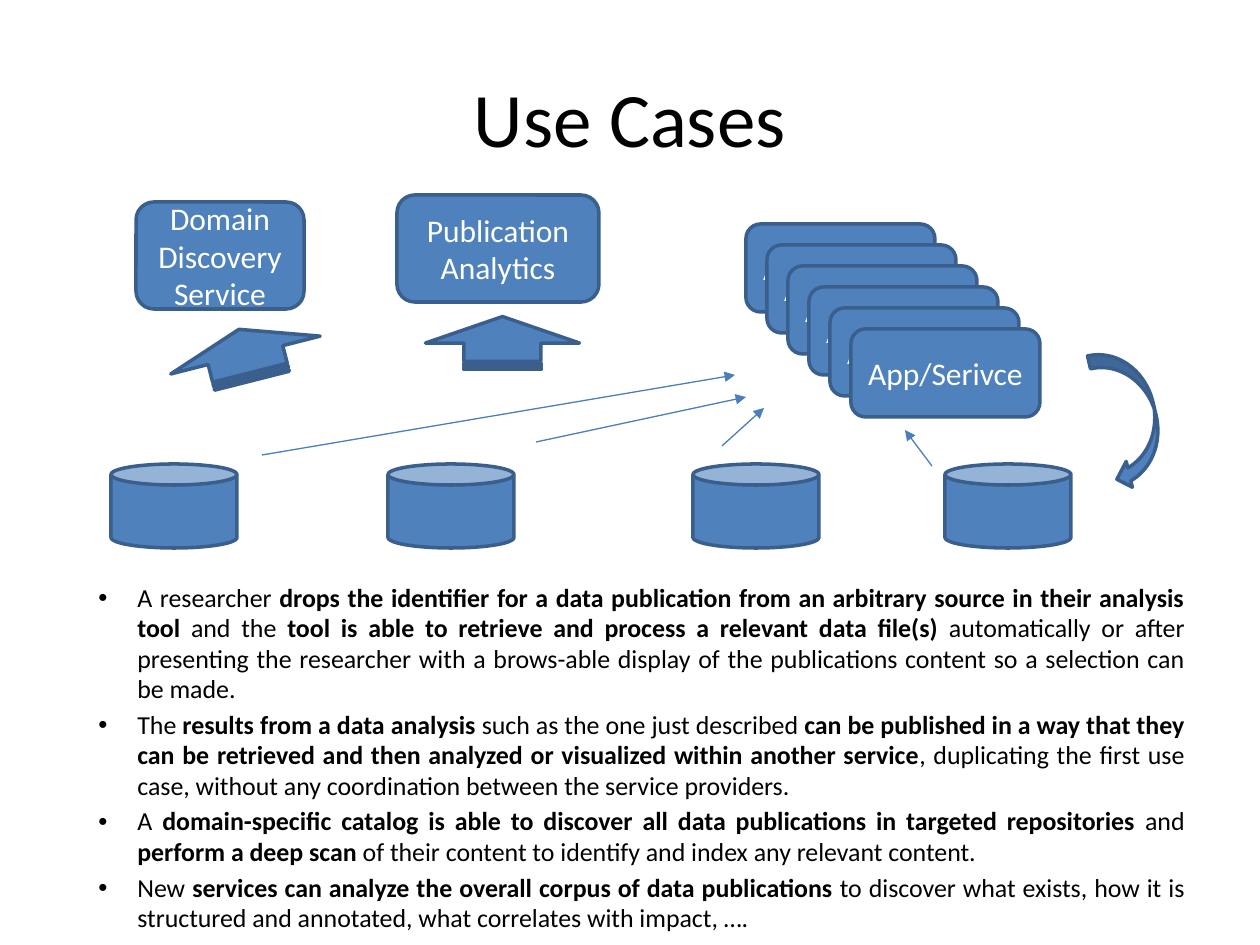
import pptx
import pptx.dml.color
import pptx.enum.shapes
import pptx.enum.text
import pptx.oxml.ns
import pptx.util
from dataclasses import dataclass
from lxml import etree

PX_PER_INCH = 126
SHAPE = pptx.enum.shapes.MSO_SHAPE
ALIGN = pptx.enum.text.PP_ALIGN
ANCHOR = pptx.enum.text.MSO_ANCHOR


@dataclass(frozen=True)
class Theme:
    font: str = "Calibri"
    text: str = "000000"
    label: str = "FFFFFF"
    fill: str = "4F81BD"
    outline: str = "3A5F8C"
    arrow: str = "4B7EBC"
    title_size: float = 44
    label_size: float = 18
    body_size: float = 14.8


THEME = Theme()

# Each bullet is a list of (text, bold) runs
BULLETS = [
    [("A researcher ", False),
     ("drops the identifier for a data publication from an arbitrary source "
      "in their analysis tool ", True),
     ("and the ", False),
     ("tool is able to retrieve and process a relevant data file(s)", True),
     (" automatically or after presenting the researcher with a brows-able display "
      "of the publications content so a selection can be made.", False)],
    [("The ", False),
     ("results from a data analysis ", True),
     ("such as the one just described ", False),
     ("can be published in a way that they can be retrieved and then analyzed "
      "or visualized within another service", True),
     (", duplicating the first use case, without any coordination between "
      "the service providers. ", False)],
    [("A ", False),
     ("domain-specific catalog is able to discover all data publications "
      "in targeted repositories ", True),
     ("and ", False),
     ("perform a deep scan ", True),
     ("of their content to identify and index any relevant content.", False)],
    [("New ", False),
     ("services can analyze the overall corpus of data publications ", True),
     ("to discover what exists, how it is structured and annotated, "
      "what correlates with impact, ….", False)],
]


def px(length):
    return pptx.util.Emu(round(length * 914400 / PX_PER_INCH))


def rgb(value):
    return pptx.dml.color.RGBColor.from_string(value)


def add_run(paragraph, text, size, color, bold=False):
    run = paragraph.add_run()
    run.text = text
    run.font.name = THEME.font
    run.font.size = pptx.util.Pt(size)
    run.font.bold = bold
    run.font.color.rgb = rgb(color)


def add_text_frame(slide, left, top, width, height, anchor):
    box = slide.shapes.add_textbox(px(left), px(top), px(width), px(height))
    box.text_frame.word_wrap = True
    box.text_frame.vertical_anchor = anchor
    return box.text_frame


def add_title(slide, text):
    frame = add_text_frame(slide, 63, 38, 1134, 157, ANCHOR.MIDDLE)
    paragraph = frame.paragraphs[0]
    paragraph.alignment = ALIGN.CENTER
    add_run(paragraph, text, THEME.title_size, THEME.text)


def set_bullet(paragraph, margin, indent):
    properties = paragraph._p.get_or_add_pPr()
    properties.set("marL", str(px(margin)))
    properties.set("indent", str(px(indent)))
    font = etree.SubElement(properties, pptx.oxml.ns.qn("a:buFont"))
    font.set("typeface", "Arial")
    bullet = etree.SubElement(properties, pptx.oxml.ns.qn("a:buChar"))
    bullet.set("char", "•")


def add_bullets(slide, bullets):
    frame = add_text_frame(slide, 63, 577, 1134, 336, ANCHOR.TOP)
    for index, runs in enumerate(bullets):
        paragraph = frame.add_paragraph() if index else frame.paragraphs[0]
        paragraph.alignment = ALIGN.JUSTIFY
        paragraph.line_spacing = 0.98
        paragraph.space_before = pptx.util.Pt(3)
        set_bullet(paragraph, 62, -39)
        for text, bold in runs:
            add_run(paragraph, text, THEME.body_size, THEME.text, bold)


def add_block(slide, kind, left, top, width, height, label=None, rotation=0):
    shape = slide.shapes.add_shape(kind, px(left), px(top), px(width), px(height))
    shape.shadow.inherit = False
    shape.rotation = rotation
    shape.fill.solid()
    shape.fill.fore_color.rgb = rgb(THEME.fill)
    shape.line.color.rgb = rgb(THEME.outline)
    shape.line.width = pptx.util.Pt(2)
    if label:
        frame = shape.text_frame
        frame.word_wrap = True
        frame.vertical_anchor = ANCHOR.MIDDLE
        frame.paragraphs[0].alignment = ALIGN.CENTER
        add_run(frame.paragraphs[0], label, THEME.label_size, THEME.label)


def add_arrow(slide, start_x, start_y, end_x, end_y):
    connector = slide.shapes.add_connector(
        pptx.enum.shapes.MSO_CONNECTOR.STRAIGHT,
        px(start_x), px(start_y), px(end_x), px(end_y))
    connector.line.color.rgb = rgb(THEME.arrow)
    connector.line.width = pptx.util.Pt(0.75)
    line = connector.line._get_or_add_ln()
    etree.SubElement(line, pptx.oxml.ns.qn("a:tailEnd")).set("type", "triangle")
    etree.SubElement(connector._element.spPr, pptx.oxml.ns.qn("a:effectLst"))


def main():
    presentation = pptx.Presentation()
    presentation.slide_width = px(1260)
    presentation.slide_height = px(945)
    slide = presentation.slides.add_slide(presentation.slide_layouts[6])

    add_title(slide, "Use Cases")
    add_bullets(slide, BULLETS)

    # Data repositories
    for left in (111, 388, 693, 945):
        add_block(slide, SHAPE.CAN, left, 464, 126, 84)

    # Cascading stack of apps
    for step in range(6):
        add_block(slide, SHAPE.ROUNDED_RECTANGLE, 746 + 21 * step, 224 + 21 * step,
                  189, 88, "App/Serivce")

    # Result published back to a repository
    add_block(slide, SHAPE.CURVED_LEFT_ARROW, 1103, 348, 53, 140, rotation=346.6)

    # Repositories feeding the apps
    for ends in ((722, 446, 764, 408), (536, 442, 746, 397),
                 (262, 455, 735, 375), (932, 466, 905, 430)):
        add_arrow(slide, *ends)

    # Services on top of the repositories
    add_block(slide, SHAPE.ROUNDED_RECTANGLE, 136, 202, 168, 107,
              "Domain Discovery Service")
    add_block(slide, SHAPE.ROUNDED_RECTANGLE, 397, 195, 202, 107,
              "Publication Analytics")
    for left, top, rotation in ((219, 278, 255.8), (476, 266, 270)):
        add_block(slide, SHAPE.STRIPED_RIGHT_ARROW, left, top, 53, 154,
                  rotation=rotation)

    presentation.save("out.pptx")


if __name__ == "__main__":
    main()
